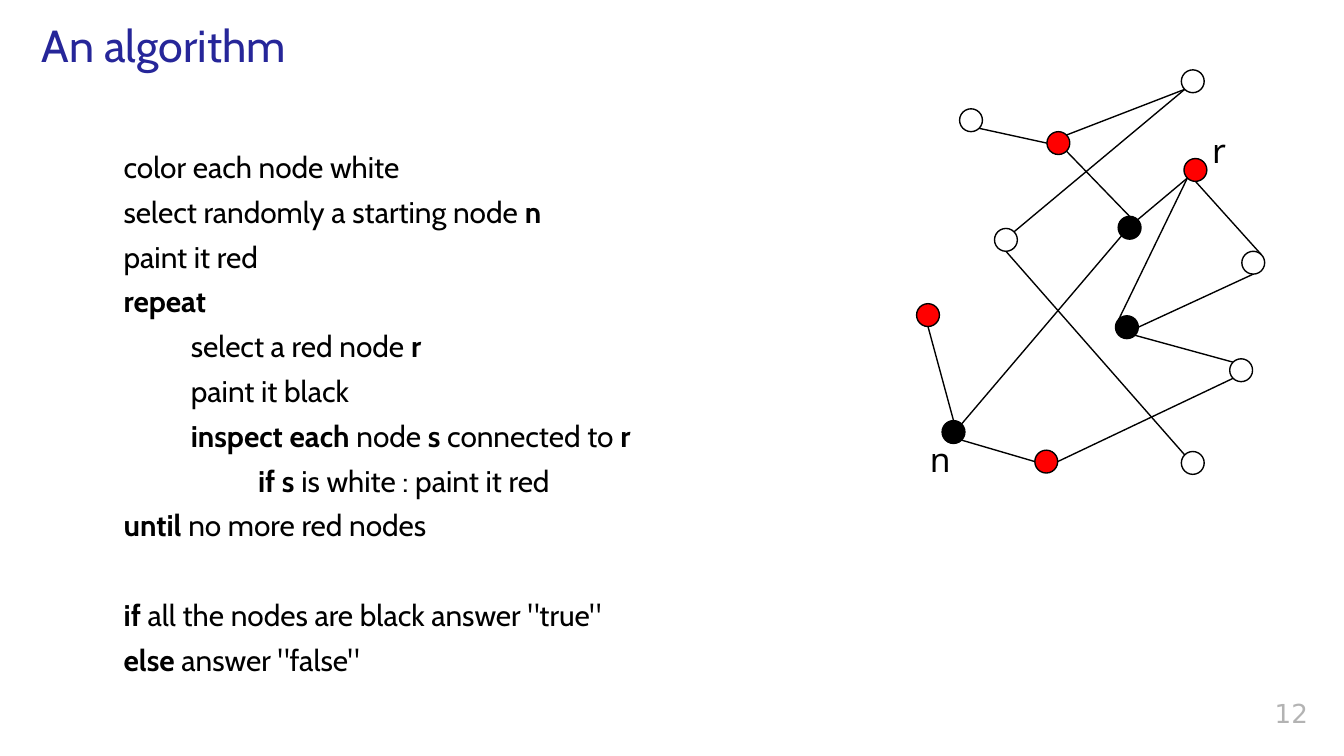
import math

import pptx
import pptx.util
from lxml import etree
from pptx.dml.color import RGBColor
from pptx.enum.shapes import MSO_CONNECTOR, MSO_SHAPE
from pptx.enum.text import MSO_ANCHOR, MSO_AUTO_SIZE, PP_ALIGN
from pptx.oxml.ns import qn
from pptx.util import Inches, Pt

BLACK = RGBColor(0x00, 0x00, 0x00)
WHITE = RGBColor(0xFF, 0xFF, 0xFF)
RED = RGBColor(0xFF, 0x00, 0x00)
NAVY = RGBColor(0x26, 0x26, 0x99)
GREY = RGBColor(0xB3, 0xB3, 0xB3)

# Content: pseudocode as (level, space before in points, [(text, bold), ...])
TITLE = "An algorithm"
CODE = [
    (0, 0, [("color each node white", False)]),
    (0, 0, [("select randomly a starting node ", False), ("n", True)]),
    (0, 0, [("paint it red", False)]),
    (0, 0, [("repeat", True)]),
    (1, 0, [("select a red node ", False), ("r", True)]),
    (1, 0, [("paint it black", False)]),
    (1, 0, [("inspect each", True), (" node ", False), ("s", True),
            (" connected to ", False), ("r", True)]),
    (2, 0, [("if s", True), (" is white : paint it red", False)]),
    (0, 0, [("until", True), (" no more red nodes", False)]),
    (0, 24, [("if", True), (' all the nodes are black answer "true"', False)]),
    (0, 0, [("else", True), (' answer "false"', False)]),
]

# Graph nodes: name -> (left, top, fill)
NODE = 0.17
NODES = {
    "hub": (8.32, 1.61, BLACK),
    "middle": (8.3, 2.35, BLACK),
    "low right": (9.15, 2.67, WHITE),
    "right": (9.24, 1.87, WHITE),
    "upper": (7.79, 0.98, RED),
    "top": (8.79, 0.52, WHITE),
    "left": (6.82, 2.26, RED),
    "inner": (7.4, 1.7, WHITE),
    "top left": (7.14, 0.81, WHITE),
    "bottom": (8.79, 3.36, WHITE),
    "lower": (7.7, 3.35, RED),
    "r": (8.81, 1.18, RED),
    "n": (7.01, 3.13, BLACK),
}

# Edges join compass points on the rims of two nodes
COMPASS = ["E", "SE", "S", "SW", "W", "NW", "N", "NE"]
EDGES = [
    ("top", "SW", "upper", "NE"),
    ("upper", "SE", "hub", "N"),
    ("top", "SW", "inner", "NE"),
    ("hub", "SW", "n", "NE"),
    ("r", "SW", "hub", "NE"),
    ("r", "S", "right", "NE"),
    ("middle", "E", "right", "S"),
    ("middle", "NW", "r", "SW"),
    ("top left", "SE", "upper", "W"),
    ("middle", "SE", "low right", "NW"),
    ("lower", "E", "low right", "SW"),
    ("n", "SE", "lower", "W"),
    ("inner", "S", "bottom", "NW"),
    ("left", "S", "n", "N"),
]

# Text formats
TITLE_FONT = dict(name="Cabin", size=Pt(24), color=NAVY, bold=False)
CODE_FONT = dict(name="Cabin", size=Pt(16), color=BLACK)
LABEL_FONT = dict(name="Noto Sans", size=Pt(18), color=BLACK)
NUMBER_FONT = dict(name="DejaVu Sans", size=Pt(14), color=GREY)

# Loose text: (text, box, format, wrap, alignment)
LABELS = [
    ("12", (7.75, 5.14, 2.08, 0.37), NUMBER_FONT, True, PP_ALIGN.RIGHT),
    ("r", (8.92, 0.92, 0.31, 0.4), LABEL_FONT, False, PP_ALIGN.LEFT),
    ("n", (6.82, 3.22, 0.36, 0.4), LABEL_FONT, False, PP_ALIGN.LEFT),
]


def add_run(p, text, **fmt):
    r = p.add_run()
    r.text = text
    for key, value in fmt.items():
        if key == "color":
            r.font.color.rgb = value
        else:
            setattr(r.font, key, value)


def place(sp, box):
    for key, value in zip(("left", "top", "width", "height"), box):
        setattr(sp, key, Inches(value))


def format_frame(tf, **fmt):
    for key, value in fmt.items():
        setattr(tf, key, value)


def rim_point(name, direction):
    left, top, _ = NODES[name]
    angle = COMPASS.index(direction) * math.pi / 4
    radius = NODE / 2
    return (Inches(left + radius * (1 + math.cos(angle))),
            Inches(top + radius * (1 + math.sin(angle))))


# Widescreen slide, 16:9
prs = pptx.Presentation()
prs.slide_width, prs.slide_height = Inches(10), Inches(10 * 9 / 16)
s = prs.slides.add_slide(prs.slide_layouts[1])

# Title, raised inside its box by a deep bottom inset
sp = s.shapes.title
place(sp, (0.21, 0.23, 8.93, 0.59))
tf = sp.text_frame
format_frame(tf, vertical_anchor=MSO_ANCHOR.MIDDLE, word_wrap=True,
             auto_size=MSO_AUTO_SIZE.NONE, margin_bottom=Inches(0.43))
tf.paragraphs[0].alignment = PP_ALIGN.LEFT
add_run(tf.paragraphs[0], TITLE, **TITLE_FONT)

# Pseudocode
sp = s.placeholders[1]
place(sp, (0.82, 0.76, 5.42, 4.56))
sp.fill.solid()
sp.fill.fore_color.rgb = WHITE
tf = sp.text_frame
format_frame(tf, vertical_anchor=MSO_ANCHOR.MIDDLE, word_wrap=True,
             auto_size=MSO_AUTO_SIZE.NONE)
for i, (level, before, runs) in enumerate(CODE):
    p = tf.add_paragraph() if i else tf.paragraphs[0]
    p.level = level
    p.line_spacing = 1.25
    p.space_before, p.space_after = Pt(before), Pt(0)
    pPr = p._p.get_or_add_pPr()
    pPr.set("marL", str(Inches(0.5 * level)))
    pPr.set("indent", "0")
    etree.SubElement(pPr, qn("a:buNone"))
    for text, bold in runs:
        add_run(p, text, bold=bold, **CODE_FONT)

# Graph nodes
for left, top, color in NODES.values():
    sp = s.shapes.add_shape(MSO_SHAPE.OVAL, Inches(left), Inches(top),
                            Inches(NODE), Inches(NODE))
    sp.shadow.inherit = False
    sp.fill.solid()
    sp.fill.fore_color.rgb = color
    sp.line.color.rgb = BLACK
    sp.line.width = Pt(0.75)

# Graph edges
for start, leave, end, enter in EDGES:
    sp = s.shapes.add_connector(MSO_CONNECTOR.STRAIGHT,
                                *rim_point(start, leave), *rim_point(end, enter))
    sp.line.color.rgb = BLACK
    sp.line.width = Pt(0.75)
    etree.SubElement(sp._element.spPr, qn("a:effectLst"))

# Node labels and page number
for text, box, font, wrap, align in LABELS:
    sp = s.shapes.add_textbox(*map(Inches, box))
    tf = sp.text_frame
    tf.word_wrap = wrap
    tf.paragraphs[0].alignment = align
    add_run(tf.paragraphs[0], text, **font)

prs.save("out.pptx")
